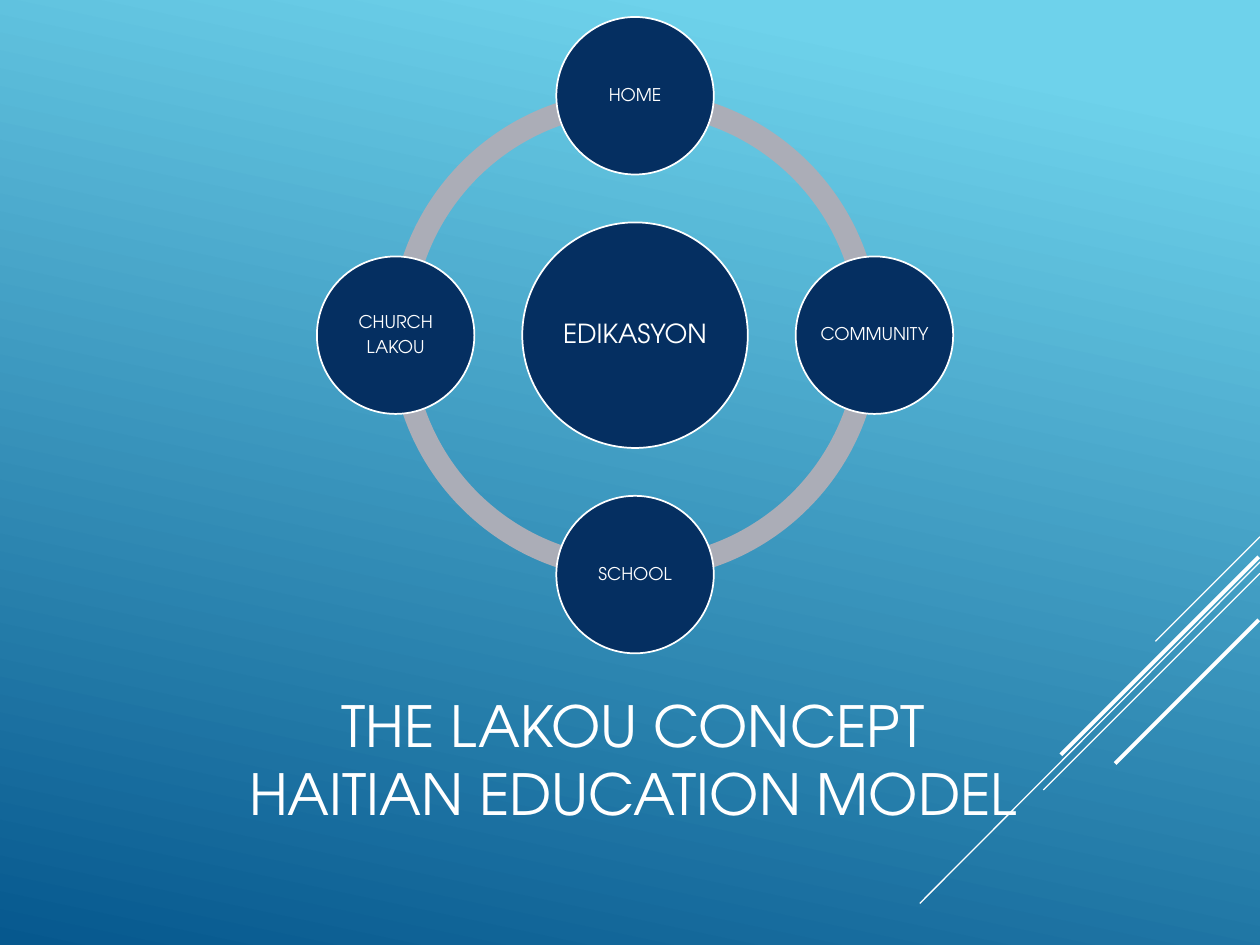
import pptx
import pptx.dml.color
import pptx.enum.shapes
import pptx.enum.text
import pptx.oxml.ns
import pptx.util
from lxml import etree
from pptx.util import Inches

WHITE = pptx.dml.color.RGBColor(0xFF, 0xFF, 0xFF)
NAVY = pptx.dml.color.RGBColor(0x05, 0x2F, 0x61)
RING_GRAY = pptx.dml.color.RGBColor(0xAB, 0xAD, 0xB7)
SKY = pptx.dml.color.RGBColor(0x6E, 0xD2, 0xEB)
DEEP_BLUE = pptx.dml.color.RGBColor(0x06, 0x58, 0x8E)

FONT = "TeX Gyre Adventor"
CENTER_X, CENTER_Y = 5.04, 2.66
ORBIT = 1.9  # distance from the centre to each outer circle
RING_SIZE = 3.89
QUARTER = 54  # 90 degrees in adjustment units

# Start x, start y, end x, end y, width in points
DIAGONALS = [
    (10, 4.26, 9.17, 5.09, 0.75),
    (10, 4.46, 7.3, 7.17, 0.75),
    (10, 4.55, 8.28, 6.27, 0.75),
    (9.99, 4.42, 8.42, 5.99, 2.25),
    (9.99, 4.92, 8.85, 6.06, 2.25),
]

# Label and direction from the centre
OUTER_CIRCLES = [
    ("HOME", 0, -1),
    ("COMMUNITY", 1, 0),
    ("SCHOOL", 0, 1),
    ("CHURCH\nLAKOU", -1, 0),
]


def set_background(slide):
    fill = slide.background.fill
    fill.gradient()
    fill.gradient_angle = 258
    for stop, color, position in zip(fill.gradient_stops, (SKY, DEEP_BLUE), (0.1, 1)):
        stop.color.rgb = color
        stop.position = position


def format_paragraph(paragraph, size):
    paragraph.alignment = pptx.enum.text.PP_ALIGN.CENTER
    for run in paragraph.runs:
        run.font.name = FONT
        run.font.size = pptx.util.Pt(size)
        run.font.color.rgb = WHITE


def add_diagonal(slide, start_x, start_y, end_x, end_y, width):
    line = slide.shapes.add_connector(
        pptx.enum.shapes.MSO_CONNECTOR.STRAIGHT,
        Inches(start_x), Inches(start_y), Inches(end_x), Inches(end_y))
    line.line.color.rgb = WHITE
    line.line.width = pptx.util.Pt(width)
    properties = line._element.spPr
    etree.SubElement(properties, pptx.oxml.ns.qn("a:effectLst"))


def add_centered_shape(slide, kind, center_x, center_y, size, color):
    shape = slide.shapes.add_shape(
        kind, Inches(center_x - size / 2), Inches(center_y - size / 2),
        Inches(size), Inches(size))
    shape.shadow.inherit = False
    shape.fill.solid()
    shape.fill.fore_color.rgb = color
    return shape


def add_ring_quarter(slide, index):
    arc = add_centered_shape(slide, pptx.enum.shapes.MSO_SHAPE.BLOCK_ARC,
                             CENTER_X, CENTER_Y, RING_SIZE, RING_GRAY)
    arc.line.fill.background()
    arc.adjustments[0] = index * QUARTER
    arc.adjustments[1] = (index + 1) % 4 * QUARTER
    arc.adjustments[2] = 0.046


def add_circle(slide, label, center_x, center_y, size, font_size):
    circle = add_centered_shape(slide, pptx.enum.shapes.MSO_SHAPE.OVAL,
                                center_x, center_y, size, NAVY)
    circle.line.color.rgb = WHITE
    circle.line.width = pptx.util.Pt(1)
    frame = circle.text_frame
    frame.text = label
    frame.word_wrap = False
    frame.vertical_anchor = pptx.enum.text.MSO_ANCHOR.MIDDLE
    frame.margin_left = frame.margin_right = Inches(0.01)
    frame.margin_top = frame.margin_bottom = Inches(0.01)
    for paragraph in frame.paragraphs:
        paragraph.line_spacing = 0.9
        paragraph.space_after = pptx.util.Pt(font_size * 0.35)
        format_paragraph(paragraph, font_size)


def set_title(slide, text):
    title = slide.shapes.title
    title.left, title.top = Inches(0.58), Inches(4.92)
    title.width, title.height = Inches(8.89), Inches(1.67)
    frame = title.text_frame
    frame.text = text
    frame.word_wrap = True
    frame.auto_size = pptx.enum.text.MSO_AUTO_SIZE.NONE
    frame.vertical_anchor = pptx.enum.text.MSO_ANCHOR.MIDDLE
    frame.margin_top = Inches(0.59)  # keeps the title clear of the diagram
    format_paragraph(frame.paragraphs[0], 32.4)


def main():
    presentation = pptx.Presentation()
    presentation.slide_width = Inches(10)
    presentation.slide_height = Inches(7.5)
    slide = presentation.slides.add_slide(presentation.slide_layouts[5])

    # Backdrop and title
    set_background(slide)
    for diagonal in DIAGONALS:
        add_diagonal(slide, *diagonal)
    set_title(slide, "THE LAKOU CONCEPT\vHAITIAN EDUCATION MODEL")

    # Ring, hub and outer circles
    for index in range(4):
        add_ring_quarter(slide, index)
    add_circle(slide, "EDIKASYON", CENTER_X, CENTER_Y, 1.79, 15)
    for label, step_x, step_y in OUTER_CIRCLES:
        add_circle(slide, label, CENTER_X + step_x * ORBIT,
                   CENTER_Y + step_y * ORBIT, 1.25, 10)

    presentation.save("out.pptx")


if __name__ == "__main__":
    main()
